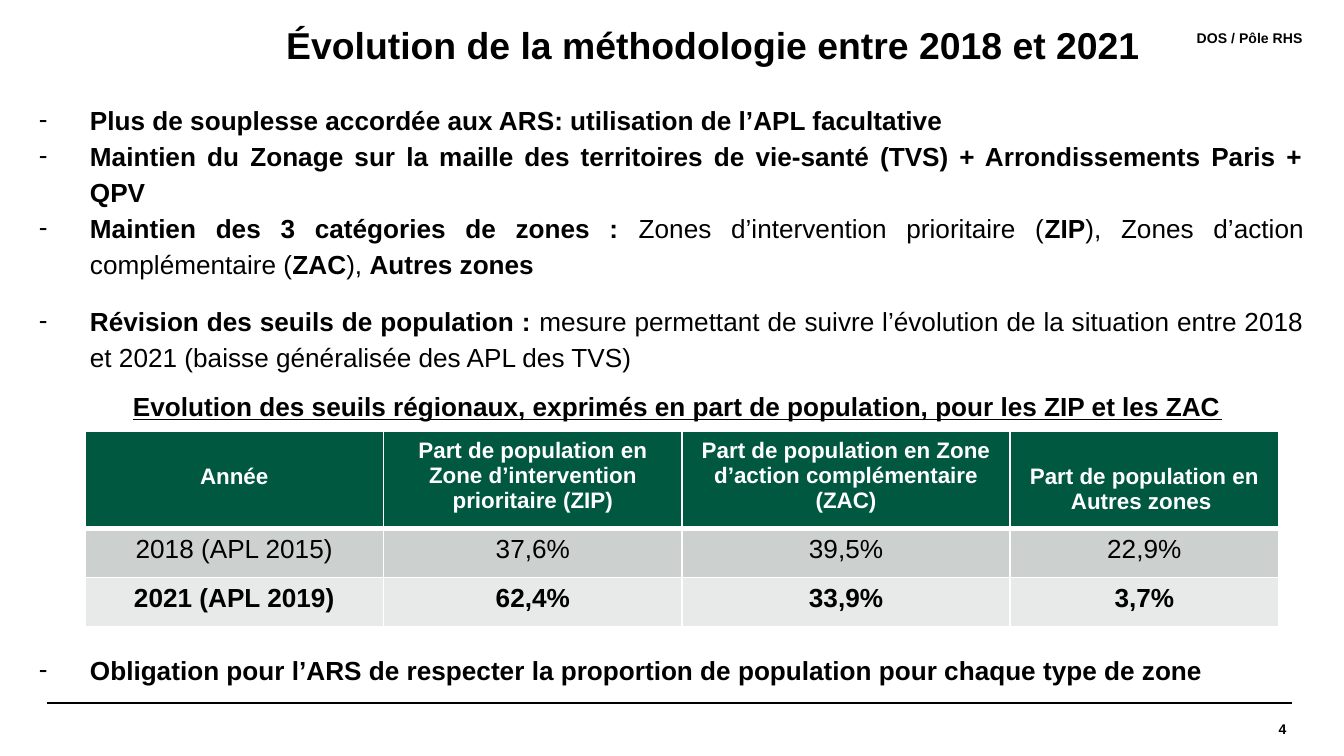
from lxml.etree import SubElement
from pptx import Presentation
from pptx.dml.color import RGBColor
from pptx.enum.shapes import MSO_CONNECTOR as Connector
from pptx.enum.text import MSO_ANCHOR as Anchor, PP_ALIGN as Align
from pptx.oxml.ns import qn
from pptx.util import Pt

BLACK = RGBColor(0x00, 0x00, 0x00)
WHITE = RGBColor(0xFF, 0xFF, 0xFF)
GREEN = RGBColor(0x00, 0x58, 0x41)
GREY = RGBColor(0xCC, 0xD1, 0xCF)
PALE_GREY = RGBColor(0xE7, 0xEA, 0xE9)

FONT = "Arial"
LINE_PITCH = 19.3
INDENT = 27.4

POINTS = [
    (0, [("Plus de souplesse accordée aux ARS: utilisation de l’APL facultative", True)]),
    (0, [("Maintien du Zonage sur la maille des territoires de vie-santé (TVS) "
          "+ Arrondissements Paris + QPV", True)]),
    (0, [("Maintien des 3 catégories de zones : ", True),
         ("Zones d’intervention prioritaire (", False), ("ZIP", True),
         ("), Zones d’action complémentaire (", False), ("ZAC", True),
         ("), ", False), ("Autres zones ", True)]),
    (11.2, [("Révision des seuils de population : ", True),
            ("mesure permettant de suivre l’évolution de la situation entre 2018 et 2021 "
             "(baisse généralisée des APL des TVS)", False)]),
]
TABLE_TITLE = "Evolution des seuils régionaux, exprimés en part de population, pour les ZIP et les ZAC"
CLOSING = (122, [("Obligation pour l’ARS de respecter la proportion de population "
                  "pour chaque type de zone", True)])

HEADERS = ["Année",
           "Part de population en Zone d’intervention prioritaire (ZIP)",
           "Part de population en Zone d’action complémentaire (ZAC)",
           "Part de population en Autres zones "]
SHARES = [["2018 (APL 2015)", "37,6%", "39,5%", "22,9%"],
          ["2021 (APL 2019)", "62,4%", "33,9%", "3,7%"]]
LOWERED_COLUMNS = (0, 3)


def style(run, size, bold=True, color=BLACK):
    run.font.name = FONT
    run.font.size = Pt(size)
    run.font.bold = bold
    run.font.color.rgb = color


def add_frame(slide, left, top, width, height, wrap=True):
    frame = slide.shapes.add_textbox(Pt(left), Pt(top), Pt(width), Pt(height)).text_frame
    frame.word_wrap = wrap
    return frame


def add_label(slide, text, box, size, align, wrap=True):
    frame = add_frame(slide, *box, wrap=wrap)
    frame.text = text
    label = frame.paragraphs[0]
    label.alignment = align
    style(label.runs[0], size)
    return frame


def add_rule(slide, left, right, y):
    rule = slide.shapes.add_connector(Connector.STRAIGHT, Pt(left), Pt(y), Pt(right), Pt(y))
    rule.line.color.rgb = BLACK
    rule.line.width = Pt(0.8)
    SubElement(rule._element.spPr, qn("a:effectLst"))


def set_spacing(paragraph, gap):
    paragraph.line_spacing = Pt(LINE_PITCH)
    if gap:
        paragraph.space_before = Pt(gap)


def fill_point(paragraph, gap, parts):
    properties = paragraph._p.get_or_add_pPr()
    properties.set("marL", str(Pt(INDENT)))
    properties.set("indent", str(-Pt(INDENT)))
    SubElement(properties, qn("a:buFont"), typeface=FONT)
    SubElement(properties, qn("a:buChar"), char="-")
    paragraph.alignment = Align.JUSTIFY
    set_spacing(paragraph, gap)
    for text, bold in parts:
        run = paragraph.add_run()
        run.text = text
        style(run, 14, bold)


def fill_table_title(paragraph):
    paragraph.text = TABLE_TITLE
    paragraph.level = 1
    paragraph._p.get_or_add_pPr().set("marL", str(Pt(6.5)))
    paragraph.alignment = Align.CENTER
    set_spacing(paragraph, 7)
    style(paragraph.runs[0], 14)
    paragraph.runs[0].font.underline = True


def add_body(slide):
    body = add_frame(slide, 13.7, 49.7, 691.9, 330.5)
    for index, (gap, parts) in enumerate(POINTS):
        paragraph = body.add_paragraph() if index else body.paragraphs[0]
        fill_point(paragraph, gap, parts)
    fill_table_title(body.add_paragraph())
    fill_point(body.add_paragraph(), *CLOSING)


def set_borders(cell, top, bottom):
    properties = cell._tc.get_or_add_tcPr()
    for side, width in (("L", 1), ("R", 1), ("T", top), ("B", bottom)):
        border = SubElement(properties, qn(f"a:ln{side}"), w=str(Pt(width)))
        fill = SubElement(border, qn("a:solidFill"))
        SubElement(fill, qn("a:srgbClr"), val=str(WHITE))


def fill_cell(cell, text, background, size, bold, color, borders):
    set_borders(cell, *borders)
    cell.fill.solid()
    cell.fill.fore_color.rgb = background
    cell.text = text
    paragraph = cell.text_frame.paragraphs[0]
    paragraph.alignment = Align.CENTER
    style(paragraph.runs[0], size, bold, color)


def add_thresholds(slide):
    widths, heights = (160, 160, 175.6, 144), (51.8, 26.4, 26.4)
    table = slide.shapes.add_table(3, 4, Pt(45.5), Pt(231.2),
                                   Pt(sum(widths)), Pt(sum(heights))).table
    for column, width in zip(table.columns, widths):
        column.width = Pt(width)
    for row, height in zip(table.rows, heights):
        row.height = Pt(height)
    looks = [(GREEN, 12, True, WHITE, (1, 3)),
             (GREY, 14, False, BLACK, (3, 1)),
             (PALE_GREY, 14, True, BLACK, (1, 1))]
    for row, texts, look in zip(table.rows, [HEADERS, *SHARES], looks):
        for cell, text in zip(row.cells, texts):
            fill_cell(cell, text, *look)
    for column in LOWERED_COLUMNS:
        table.cell(0, column).margin_top = Pt(17.4)


def main():
    deck = Presentation()
    deck.slide_width, deck.slide_height = Pt(720), Pt(405)
    slide = deck.slides.add_slide(deck.slide_layouts[6])

    for left in (25.2, 28.1):
        add_rule(slide, left, left + 663.8, 376.6)

    number = add_label(slide, "4", (582.5, 376.6, 106.6, 28.1), 7.5, Align.RIGHT)
    number.vertical_anchor = Anchor.MIDDLE
    number.margin_left = number.margin_right = number.margin_top = number.margin_bottom = 0

    title = add_label(slide, "Évolution de la méthodologie entre 2018 et 2021",
                      (144.7, 13.7, 663.1, 42.5), 20, Align.LEFT)
    title.margin_left, title.margin_top = Pt(8.6), Pt(1)
    title.paragraphs[0].line_spacing = 0.9

    add_body(slide)
    add_label(slide, "DOS / Pôle RHS", (633.6, 12.2, 71.3, 16.6), 7.5, Align.RIGHT, wrap=False)
    add_thresholds(slide)
    deck.save("out.pptx")


if __name__ == "__main__":
    main()
